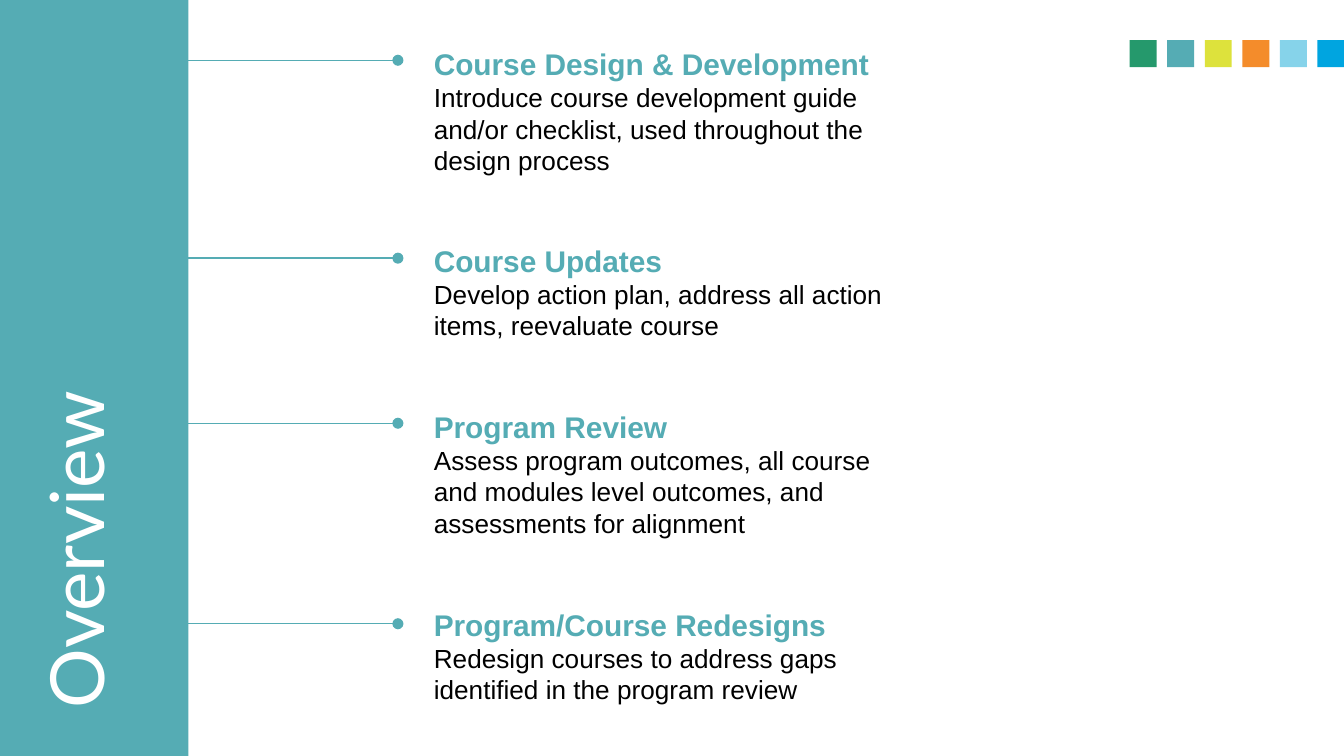
from lxml import etree
from pptx import Presentation
from pptx.dml.color import RGBColor
from pptx.enum import shapes, text
from pptx.oxml import ns
from pptx.util import Cm, Pt

TEAL = RGBColor(0x55, 0xAC, 0xB4)
GREEN = RGBColor(0x25, 0x99, 0x6C)
LIME = RGBColor(0xDD, 0xE2, 0x3C)
ORANGE = RGBColor(0xF4, 0x8C, 0x2B)
SKY = RGBColor(0x86, 0xD3, 0xEA)
BLUE = RGBColor(0x00, 0xA5, 0xE0)
WHITE = RGBColor(0xFF, 0xFF, 0xFF)
BLACK = RGBColor(0x00, 0x00, 0x00)

HEADING = {"name": "Arial", "size": Pt(16), "bold": True}
BODY = {"name": "Arial", "size": Pt(14), "bold": False}
TITLE = {"name": "Lato", "size": Pt(40)}
INSETS = {"margin_left": 0, "margin_right": Cm(0.25),
          "margin_top": Cm(0.13), "margin_bottom": Cm(0.13)}


def add_rect(s, x, y, w, h, color):
    sp = s.shapes.add_shape(shapes.MSO_SHAPE.RECTANGLE, Cm(x), Cm(y), Cm(w), Cm(h))
    sp.shadow.inherit = False
    sp.fill.solid()
    sp.fill.fore_color.rgb = color
    sp.line.fill.background()


def add_run(p, words, fmt, color):
    r = p.add_run()
    r.text = words
    for key, value in fmt.items():
        setattr(r.font, key, value)
    r.font.color.rgb = color


prs = Presentation()
prs.slide_width, prs.slide_height = Cm(25.4), Cm(14.29)
s = prs.slides.add_slide(prs.slide_layouts[6])

for i, color in enumerate([GREEN, TEAL, LIME, ORANGE, SKY, BLUE]):
    add_rect(s, 21.35 + i * 0.71, 0.76, 0.51, 0.51, color)
add_rect(s, 0, 0, 3.56, 14.29, TEAL)

topics = [
    (0.74, 9.07, 2.74, 1.14, "Course Design & Development",
     "Introduce course development guide and/or checklist, used throughout the design process"),
    (4.45, 9.25, 2.13, 4.88, "Course Updates",
     "Develop action plan, address all action items, reevaluate course"),
    (7.59, 9.25, 2.74, 8, "Program Review",
     "Assess program outcomes, all course and modules level outcomes, and assessments for alignment"),
    (11.33, 9.07, 2.13, 11.79, "Program/Course Redesigns",
     "Redesign courses to address gaps identified in the program review"),
]
for top, width, height, line_y, heading, body in topics:
    sp = s.shapes.add_textbox(Cm(8.2), Cm(top), Cm(width), Cm(height))
    tf = sp.text_frame
    tf.word_wrap = True
    tf.auto_size = text.MSO_AUTO_SIZE.SHAPE_TO_FIT_TEXT
    for key, value in INSETS.items():
        setattr(tf, key, value)
    p = tf.paragraphs[0]
    p.space_after = Pt(16)
    add_run(p, heading, HEADING, TEAL)
    p.add_line_break()
    add_run(p, body, BODY, BLACK)

    cx = s.shapes.add_connector(shapes.MSO_CONNECTOR.STRAIGHT,
                                Cm(3.53), Cm(line_y), Cm(7.52), Cm(line_y))
    cx.line.color.rgb = TEAL
    cx.line.width = Pt(0.75)
    etree.SubElement(cx.line._get_or_add_ln(), ns.qn("a:tailEnd"), type="oval")
    etree.SubElement(cx._element.spPr, ns.qn("a:effectLst"))

sp = s.shapes.add_textbox(Cm(0.64), Cm(1.9), Cm(3.5), Cm(11.74))
tf = sp.text_frame
tf.word_wrap = True
tf._txBody.bodyPr.set("vert", "vert270")
p = tf.paragraphs[0]
p.line_spacing = 0.9
add_run(p, "Overview", TITLE, WHITE)

prs.save("out.pptx")
